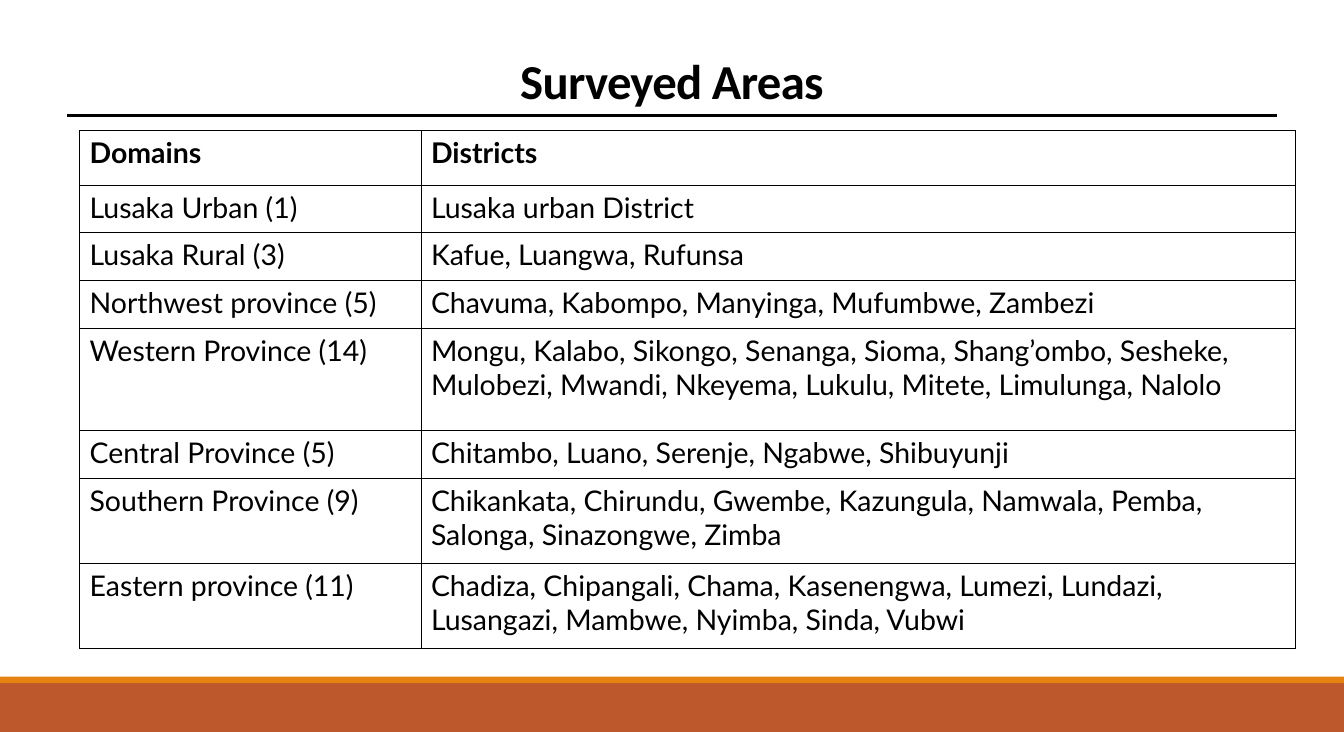
from pptx import Presentation
from pptx import util as u
from pptx.dml.color import RGBColor
from pptx.enum import shapes, text
from pptx.oxml import parse_xml
from pptx.oxml.ns import nsdecls

TITLE = "Surveyed Areas"
ROWS = [
    ("Domains", "Districts", 1.42),
    ("Lusaka Urban (1)", "Lusaka urban District", 1.24),
    ("Lusaka Rural (3)", "Kafue, Luangwa, Rufunsa", 1.24),
    ("Northwest province (5)", "Chavuma, Kabompo, Manyinga, Mufumbwe, Zambezi", 1.24),
    ("Western Province (14)",
     "Mongu, Kalabo, Sikongo, Senanga, Sioma, Shang’ombo, Sesheke, "
     "Mulobezi, Mwandi, Nkeyema, Lukulu, Mitete, Limulunga, Nalolo", 2.67),
    ("Central Province (5)", "Chitambo, Luano, Serenje, Ngabwe, Shibuyunji", 1.24),
    ("Southern Province (9)",
     "Chikankata, Chirundu, Gwembe, Kazungula, Namwala, Pemba, "
     "Salonga, Sinazongwe, Zimba", 2.21),
    ("Eastern province (11)",
     "Chadiza, Chipangali, Chama, Kasenengwa, Lumezi, Lundazi, "
     "Lusangazi, Mambwe, Nyimba, Sinda, Vubwi", 2.21),
]
COL_WIDTHS = (8.89, 22.77)

BLACK = RGBColor(0x00, 0x00, 0x00)
WHITE = RGBColor(0xFF, 0xFF, 0xFF)
RUST = RGBColor(0xBD, 0x58, 0x2C)
ORANGE = RGBColor(0xE4, 0x83, 0x12)

WIDTH, HEIGHT = 35.0, 19.05
FOOTER_H, STRIPE_H = 1.27, 0.17
MARGIN, RULE_Y = 1.75, 3.0
TITLE_TOP, TITLE_H = 1.02, 1.96
TABLE_LEFT, TABLE_TOP = 2.08, 3.4


def write(tf, content, size, font, bold=False, align=None, line=None, spacing=None):
    p = tf.paragraphs[0]
    p.alignment = align
    if line:
        p.line_spacing = u.Pt(line)
    r = p.add_run()
    r.text = content
    r.font.size, r.font.name, r.font.bold = u.Pt(size), font, bold
    r.font.color.rgb = BLACK
    if spacing:
        r.font._element.set("spc", str(spacing))


def add_band(s, top, height, color):
    sp = s.shapes.add_shape(shapes.MSO_SHAPE.RECTANGLE, 0, u.Cm(top), u.Cm(WIDTH), u.Cm(height))
    sp.shadow.inherit = False
    sp.fill.solid()
    sp.fill.fore_color.rgb = color
    sp.line.fill.background()


def add_borders(cell):
    tc_pr = cell._tc.get_or_add_tcPr()
    for side in ("lnL", "lnR", "lnT", "lnB"):
        tc_pr.append(parse_xml(
            f'<a:{side} {nsdecls("a")} w="{u.Pt(1)}"><a:solidFill>'
            f'<a:srgbClr val="{BLACK}"/></a:solidFill></a:{side}>'))


def add_title(s):
    inner = WIDTH - 2 * MARGIN
    sp = s.shapes.add_textbox(u.Cm(MARGIN), u.Cm(TITLE_TOP), u.Cm(inner), u.Cm(TITLE_H))
    tf = sp.text_frame
    tf.word_wrap = True
    tf.vertical_anchor = text.MSO_ANCHOR.BOTTOM
    write(tf, TITLE, 36, "Calibri", bold=True, align=text.PP_ALIGN.CENTER, line=44, spacing=-50)
    rule = s.shapes.add_connector(shapes.MSO_CONNECTOR.STRAIGHT, u.Cm(MARGIN), u.Cm(RULE_Y),
                                  u.Cm(WIDTH - MARGIN), u.Cm(RULE_Y))
    rule.line.color.rgb = BLACK
    rule.line.width = u.Pt(2)
    rule._element.spPr.append(parse_xml(f'<a:effectLst {nsdecls("a")}/>'))


def add_area_table(s):
    total = sum(height for _, _, height in ROWS)
    table = s.shapes.add_table(len(ROWS), len(COL_WIDTHS), u.Cm(TABLE_LEFT), u.Cm(TABLE_TOP),
                               u.Cm(sum(COL_WIDTHS)), u.Cm(total)).table
    table.horz_banding = False
    for column, width in zip(table.columns, COL_WIDTHS):
        column.width = u.Cm(width)
    for i, (domain, districts, height) in enumerate(ROWS):
        table.rows[i].height = u.Cm(height)
        for cell, content in zip(table.rows[i].cells, (domain, districts)):
            add_borders(cell)
            cell.fill.solid()
            cell.fill.fore_color.rgb = WHITE
            write(cell.text_frame, content, 21, "Lato", bold=i == 0)


def main():
    prs = Presentation()
    prs.slide_width, prs.slide_height = u.Cm(WIDTH), u.Cm(HEIGHT)
    s = prs.slides.add_slide(prs.slide_layouts[6])
    footer_top = HEIGHT - FOOTER_H
    add_band(s, footer_top, FOOTER_H, RUST)
    add_band(s, footer_top - STRIPE_H, STRIPE_H, ORANGE)
    add_title(s)
    add_area_table(s)
    prs.save("out.pptx")


if __name__ == "__main__":
    main()
